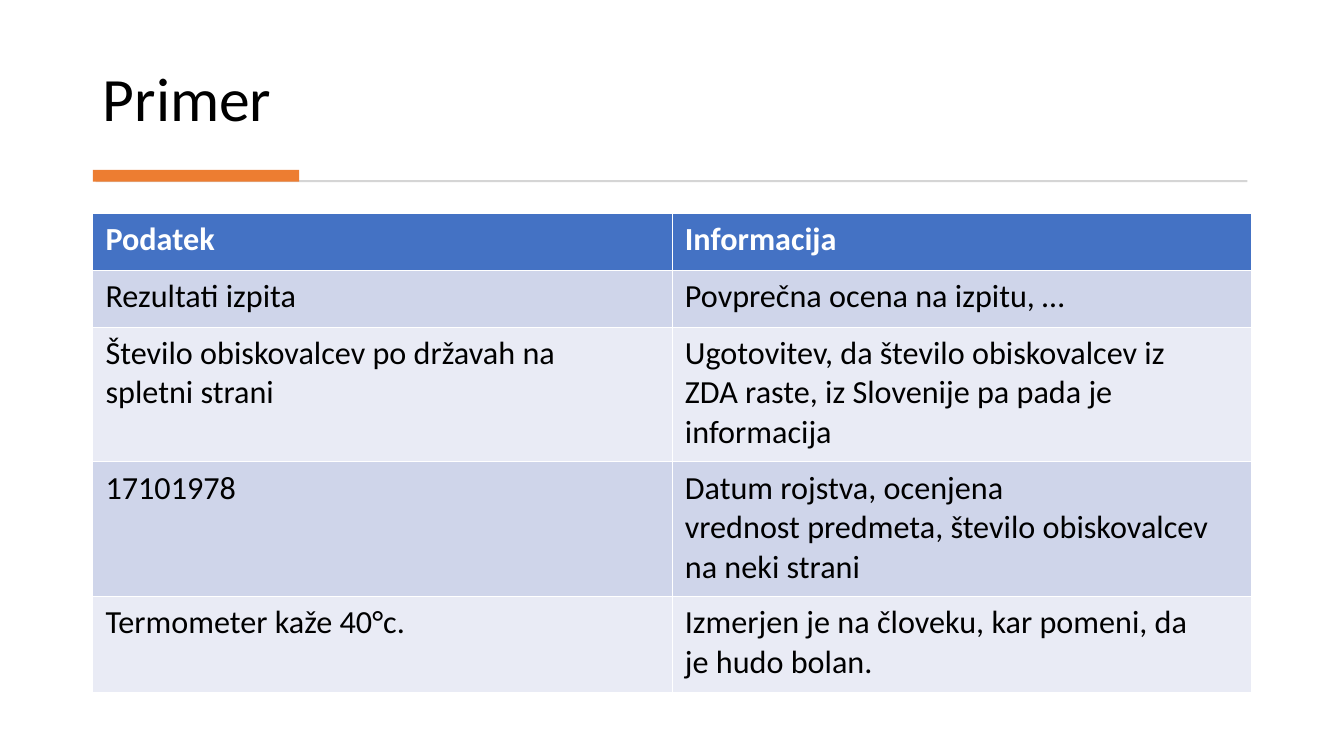
"""Build the slide "Primer" with a table of data and information."""
from lxml import etree
from pptx import Presentation
from pptx.dml.color import RGBColor
from pptx.enum.shapes import MSO_SHAPE
from pptx.enum.text import MSO_ANCHOR, MSO_AUTO_SIZE, PP_ALIGN
from pptx.oxml.ns import qn
from pptx.util import Cm, Pt

RECTANGLE = MSO_SHAPE.RECTANGLE
BOTTOM = MSO_ANCHOR.BOTTOM
NO_AUTOFIT = MSO_AUTO_SIZE.NONE
LEFT = PP_ALIGN.LEFT
FONT = "Calibri"
TITLE_ONLY = 5
TIE = "~"
HARD_SPACE = chr(160)
COLORS = {
    "black": "000000",
    "white": "FFFFFF",
    "rule": "D5D5D5",
    "accent": "ED7D31",
    "header": "4472C4",
    "dark_band": "CFD5EA",
    "light_band": "E9EBF5",
}
ROWS = [
    (1.43, "Podatek", "Informacija"),
    (1.43, "Rezultati~izpita", "Povprečna~ocena na izpitu, …"),
    (3.4, "Število~obiskovalcev po državah na spletni~strani",
     "Ugotovitev, da število obiskovalcev iz ZDA~raste, iz Slovenije pa pada je informacija"),
    (3.4, "17101978",
     "Datum rojstva,~ocenjena vrednost~predmeta, število obiskovalcev na neki~strani"),
    (2.4, "Termometer~kaže 40°c.",
     "Izmerjen~je na človeku, kar pomeni, da je~hudo bolan."),
]


def format_text(para, size, color, bold=False):
    for span in para.runs:
        span.font.name = FONT
        span.font.size = Pt(size)
        span.font.bold = bold
        span.font.color.rgb = RGBColor.from_string(COLORS[color])


def add_borders(cell):
    properties = cell._tc.get_or_add_tcPr()
    for position, side in enumerate(("a:lnL", "a:lnR", "a:lnT", "a:lnB")):
        line = etree.Element(qn(side), w=str(Pt(0.75)))
        fill = etree.SubElement(line, qn("a:solidFill"))
        etree.SubElement(fill, qn("a:srgbClr"), val=COLORS["white"])
        properties.insert(position, line)


deck = Presentation()
deck.slide_width, deck.slide_height = Cm(33.87), Cm(19.05)
page = deck.slides.add_slide(deck.slide_layouts[TITLE_ONLY])

title = page.shapes.title
title.left, title.top, title.width, title.height = Cm(2.34), Cm(0.71), Cm(29.18), Cm(2.82)
title.text_frame.text = "Primer"
title.text_frame.vertical_anchor = BOTTOM
title.text_frame.auto_size = NO_AUTOFIT
heading = title.text_frame.paragraphs[0]
heading.alignment = LEFT
heading.line_spacing = 0.9
format_text(heading, 44, "black")

for color, left, top, width, height in (
    ("rule", 2.41, 4.54, 29.03, 0.05),
    ("accent", 2.34, 4.28, 5.2, 0.3),
):
    bar = page.shapes.add_shape(RECTANGLE, Cm(left), Cm(top), Cm(width), Cm(height))
    bar.shadow.inherit = False
    bar.fill.solid()
    bar.fill.fore_color.rgb = RGBColor.from_string(COLORS[color])
    bar.line.fill.background()

total_height = sum(row[0] for row in ROWS)
table = page.shapes.add_table(
    len(ROWS), 2, Cm(2.34), Cm(5.38), Cm(29.2), Cm(total_height)).table
for column in table.columns:
    column.width = Cm(14.6)

for row_index, (height, *texts) in enumerate(ROWS):
    table.rows[row_index].height = Cm(height)
    is_header = row_index == 0
    band = "header" if is_header else ("light_band", "dark_band")[row_index % 2]
    for column_index, text in enumerate(texts):
        cell = table.cell(row_index, column_index)
        cell.margin_left = cell.margin_right = Cm(0.32)
        cell.margin_top = cell.margin_bottom = Cm(0.16)
        cell.fill.solid()
        cell.fill.fore_color.rgb = RGBColor.from_string(COLORS[band])
        add_borders(cell)
        cell.text_frame.text = text.replace(TIE, HARD_SPACE)
        format_text(cell.text_frame.paragraphs[0], 23,
                    "white" if is_header else "black", is_header)

deck.save("out.pptx")
